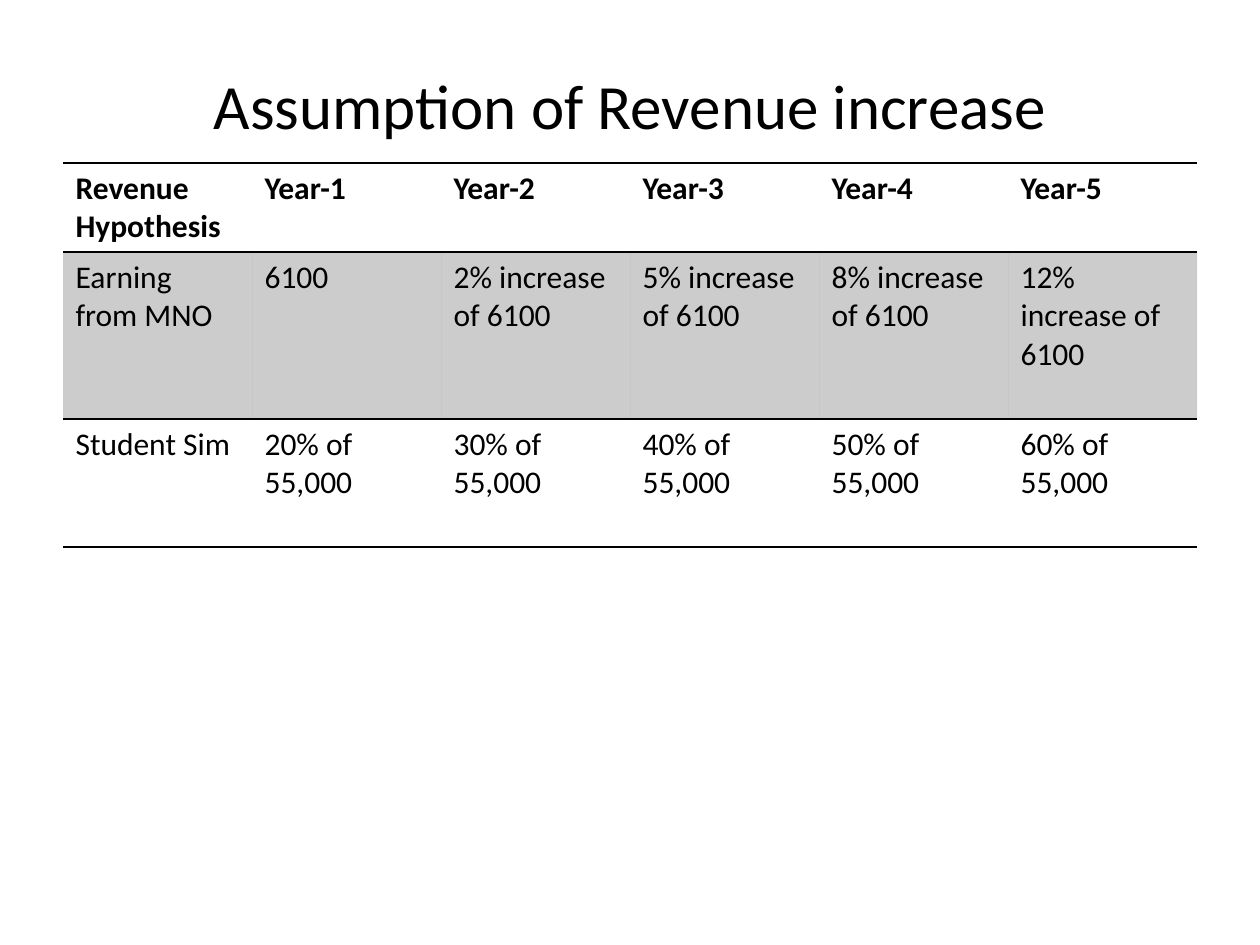
from pptx import Presentation
from pptx.dml.color import RGBColor
from pptx.enum.text import MSO_ANCHOR, PP_ALIGN
from pptx.oxml.ns import qn
from pptx.util import Pt
from lxml.etree import SubElement

BLACK = "000000"
NO_STYLE = "{2D5ABB26-0587-4C30-8999-92F81FD0307C}"


def rgb(color):
    return RGBColor.from_string(color)


def add_text(p, text, **fmt):
    r = p.add_run()
    r.text = text
    r.font.color.rgb = rgb(BLACK)
    for name, value in ({"name": "Calibri"} | fmt).items():
        setattr(r.font, name, value)


prs = Presentation()
prs.slide_width, prs.slide_height = Pt(720), Pt(540)
s = prs.slides.add_slide(prs.slide_layouts[6])

# Title
tf = s.shapes.add_textbox(Pt(36), Pt(21.6), Pt(648), Pt(75.6)).text_frame
tf.word_wrap = True
tf.vertical_anchor = MSO_ANCHOR.MIDDLE
p = tf.paragraphs[0]
p.alignment = PP_ALIGN.CENTER
add_text(p, "Assumption of Revenue increase", size=Pt(36))

# Table content
rows = [
    ["Revenue Hypothesis"] + [f"Year-{n}" for n in range(1, 6)],
    ["Earning from MNO", "6100"] + [f"{n}% increase of 6100" for n in (2, 5, 8, 12)],
    ["Student Sim"] + [f"{n}% of 55,000" for n in range(20, 70, 10)],
]
heights = [51, 95.4, 73.2]
borders = [("a:lnT", "a:lnB"), ("a:lnT",), ("a:lnB",)]

# Table, equal columns, plain style
table = s.shapes.add_table(len(rows), len(rows[0]), Pt(36), Pt(93),
                           Pt(648), Pt(sum(heights))).table
table._tbl.tblPr.find(qn("a:tableStyleId")).text = NO_STYLE
table.horz_banding = False

for i, texts in enumerate(rows):
    table.rows[i].height = Pt(heights[i])
    for j, text in enumerate(texts):
        cell = table.cell(i, j)
        add_text(cell.text_frame.paragraphs[0], text, size=Pt(18), bold=i == 0)

        # Horizontal rules
        tcPr = cell._tc.get_or_add_tcPr()
        for side in borders[i]:
            ln = SubElement(tcPr, qn(side), w=str(Pt(1)))
            fill = SubElement(ln, qn("a:solidFill"))
            SubElement(fill, qn("a:srgbClr"), val=BLACK)

        # Shaded middle row: black at 20 % opacity
        if i == 1:
            cell.fill.solid()
            cell.fill.fore_color.rgb = rgb(BLACK)
            color = tcPr.find(qn("a:solidFill")).find(qn("a:srgbClr"))
            SubElement(color, qn("a:alpha"), val="20000")
        else:
            cell.fill.background()

prs.save("out.pptx")
